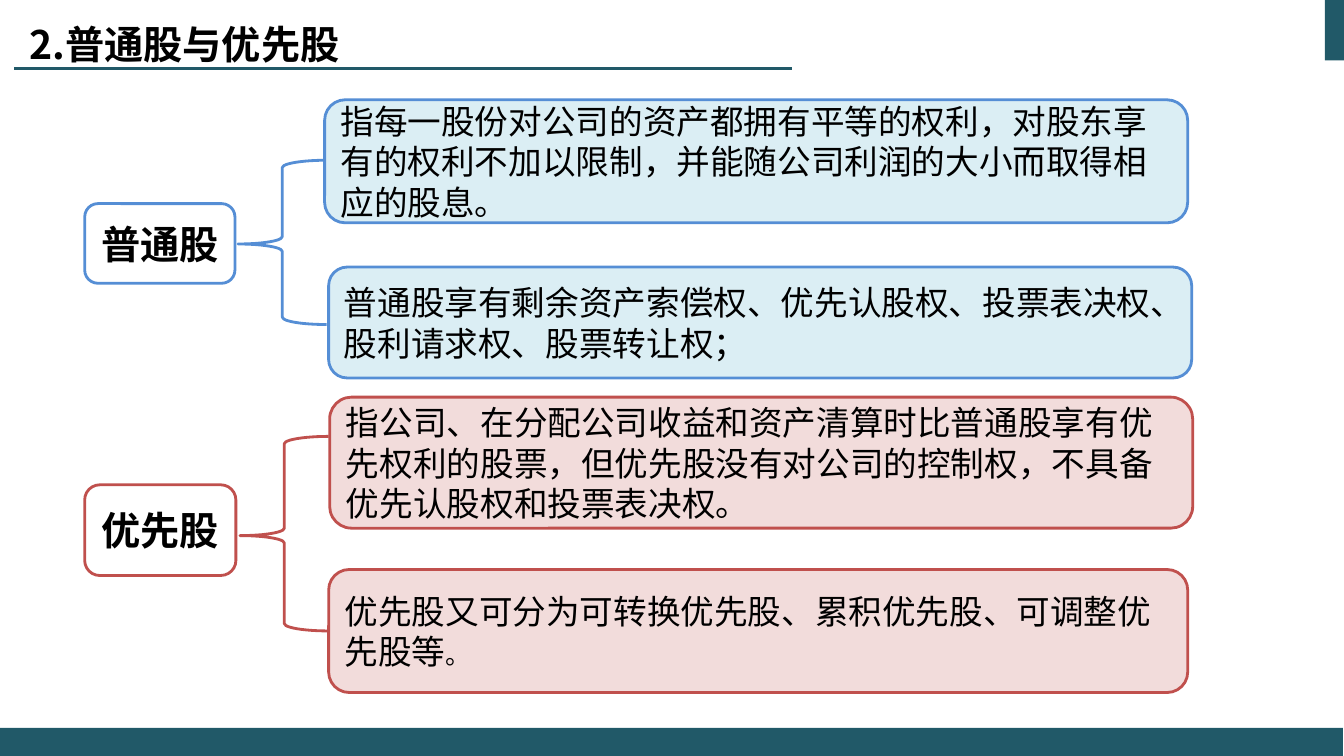
from pptx import Presentation, util as u
from pptx.dml.color import RGBColor
from pptx.enum import shapes, text
from pptx.oxml.ns import qn
from lxml import etree

Inches = u.Inches
COLORS = {
    "teal": "215968", "white": "FFFFFF", "black": "000000",
    "blue": "558ED5", "pale_blue": "DBEEF4",
    "red": "C0504D", "pale_red": "F2DCDB",
}
CJK_FONT = "Noto Sans CJK SC"
SHAPE = shapes.MSO_SHAPE


def color(name):
    return RGBColor.from_string(COLORS[name])


def write(shape, *runs, size=24, font="Calibri", bold=False,
          align=text.PP_ALIGN.LEFT):
    """Write one paragraph; a run is a string or a (string, size) pair."""
    frame = shape.text_frame
    frame.word_wrap = True
    frame.vertical_anchor = text.MSO_ANCHOR.MIDDLE
    paragraph = frame.paragraphs[0]
    paragraph.alignment = align
    for item in runs:
        words, points = item if isinstance(item, tuple) else (item, size)
        run = paragraph.add_run()
        run.text = words
        run.font.size = u.Pt(points)
        run.font.name = font
        run.font.bold = bold
        run.font.color.rgb = color("black")
        if font == CJK_FONT:
            east_asian = etree.SubElement(run.font._element, qn("a:ea"))
            east_asian.set("typeface", font)


def add_block(slide, kind, box, fill, line=None):
    shape = slide.shapes.add_shape(kind, *map(Inches, box))
    shape.shadow.inherit = False
    shape.fill.solid()
    shape.fill.fore_color.rgb = color(fill)
    if line:
        shape.line.color.rgb = color(line)
        shape.line.width = u.Pt(2)
    else:
        shape.line.fill.background()
    return shape


def add_frame(slide, width, height):
    # Corner block and bottom band
    add_block(slide, SHAPE.RECTANGLE, (width - 0.19, 0, 0.2, 0.6), "teal")
    add_block(slide, SHAPE.RECTANGLE, (0, height - 0.28, 13.32, 0.28), "teal")
    # Rule under the title
    rule = slide.shapes.add_connector(
        shapes.MSO_CONNECTOR.STRAIGHT,
        Inches(0.14), Inches(0.68), Inches(7.86), Inches(0.68))
    rule.line.color.rgb = color("teal")
    rule.line.width = u.Pt(1.5)
    etree.SubElement(rule._element.spPr, qn("a:effectLst"))


def add_title(slide, box, words):
    title = slide.shapes.title
    title.left, title.top, title.width, title.height = map(Inches, box)
    write(title, words, size=28, font=CJK_FONT, bold=True,
          align=text.PP_ALIGN.CENTER)


def add_branch(slide, top, name, label_box, brace_box, details, fill, line):
    """Draw a label, its brace and its detail boxes, measured from top."""
    def place(box):
        left, offset, width, height = box
        return left, top + offset, width, height

    label = add_block(slide, SHAPE.ROUNDED_RECTANGLE, place(label_box),
                      "white", line)
    write(label, name, size=28, bold=True, align=text.PP_ALIGN.CENTER)

    brace = add_block(slide, SHAPE.LEFT_BRACE, place(brace_box), "white", line)
    brace.adjustments[0] = 0.083
    brace.adjustments[1] = 0.51

    for box, runs in details:
        detail = add_block(slide, SHAPE.ROUNDED_RECTANGLE, place(box),
                           fill, line)
        write(detail, *runs)


def main():
    width, height = 13.33, 7.5
    presentation = Presentation()
    presentation.slide_width = Inches(width)
    presentation.slide_height = Inches(height)
    slide = presentation.slides.add_slide(presentation.slide_layouts[5])

    add_frame(slide, width, height)
    add_title(slide, (0.06, 0.13, 3.54, 0.61), "2.普通股与优先股")

    # Common shares
    add_branch(
        slide, 0.99, "普通股", (0.84, 1.03, 1.49, 0.79), (2.36, 0.6, 0.88, 1.63),
        [((3.22, 0, 8.56, 1.22),
          ["指每一股份对公司的资产都拥有平等的权利，对股东享有的权利不加以限制，"
           "并能随公司利润的大小而取得相应的股息。"]),
         ((3.26, 1.66, 8.56, 1.1),
          ["普通股享有剩余资产索偿权、优先认股权、投票表决权、"
           "股利请求权、股票转让权；"])],
        "pale_blue", "blue")

    # Preferred shares
    add_branch(
        slide, 3.94, "优先股", (0.84, 0.87, 1.5, 0.9), (2.38, 0.39, 0.88, 1.93),
        [((3.27, 0, 8.56, 1.3),
          ["指公司、在分配公司收益和资产清算时比普通股享有优先权利的股票，"
           "但优先股没有对公司的控制权，不具备优先认股权和投票表决权。"]),
         ((3.26, 1.71, 8.52, 1.22),
          ["优先股又可分为可转换优先股、累积优先股、可调整优先股等",
           ("。", 18)])],
        "pale_red", "red")

    presentation.save("out.pptx")


if __name__ == "__main__":
    main()
